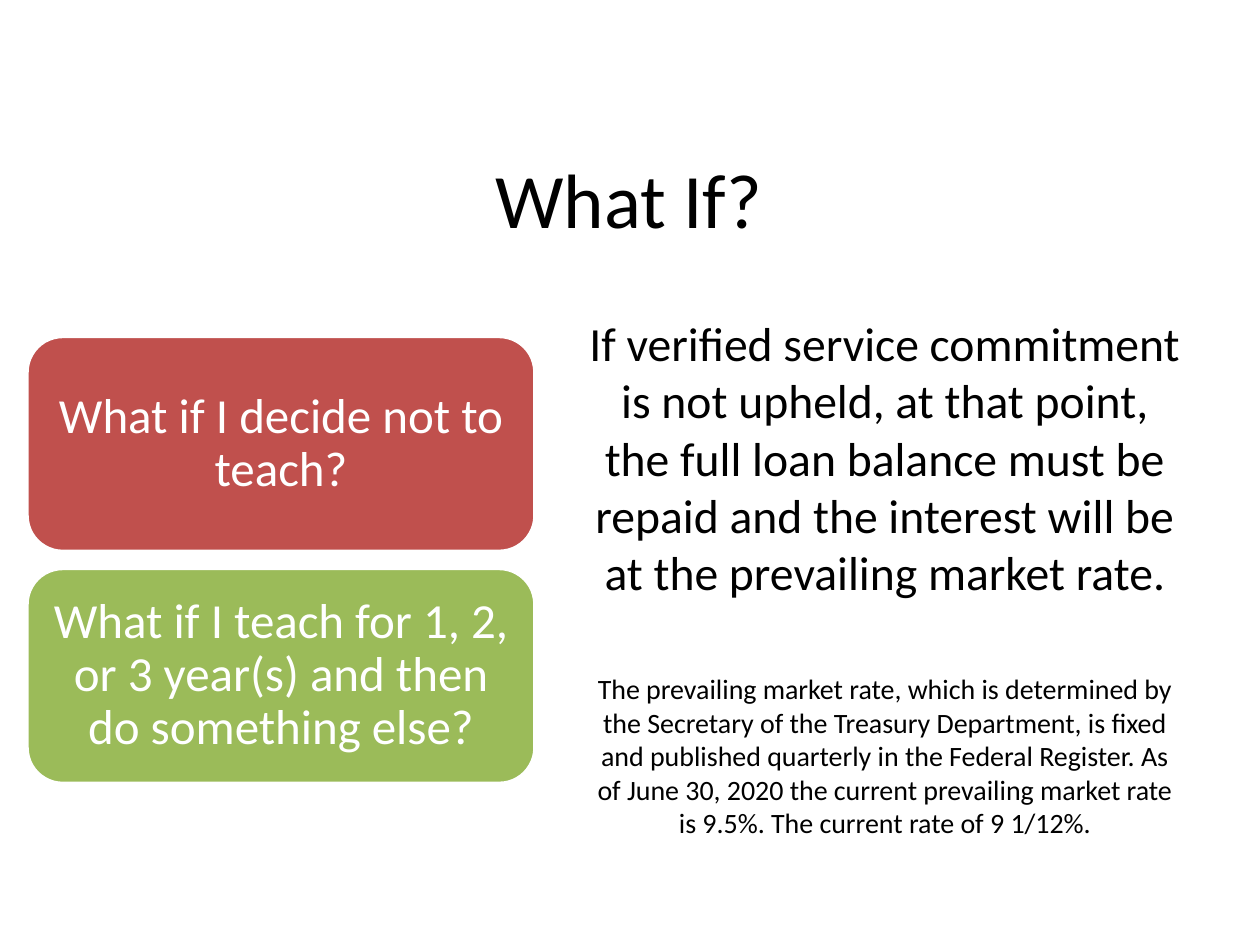
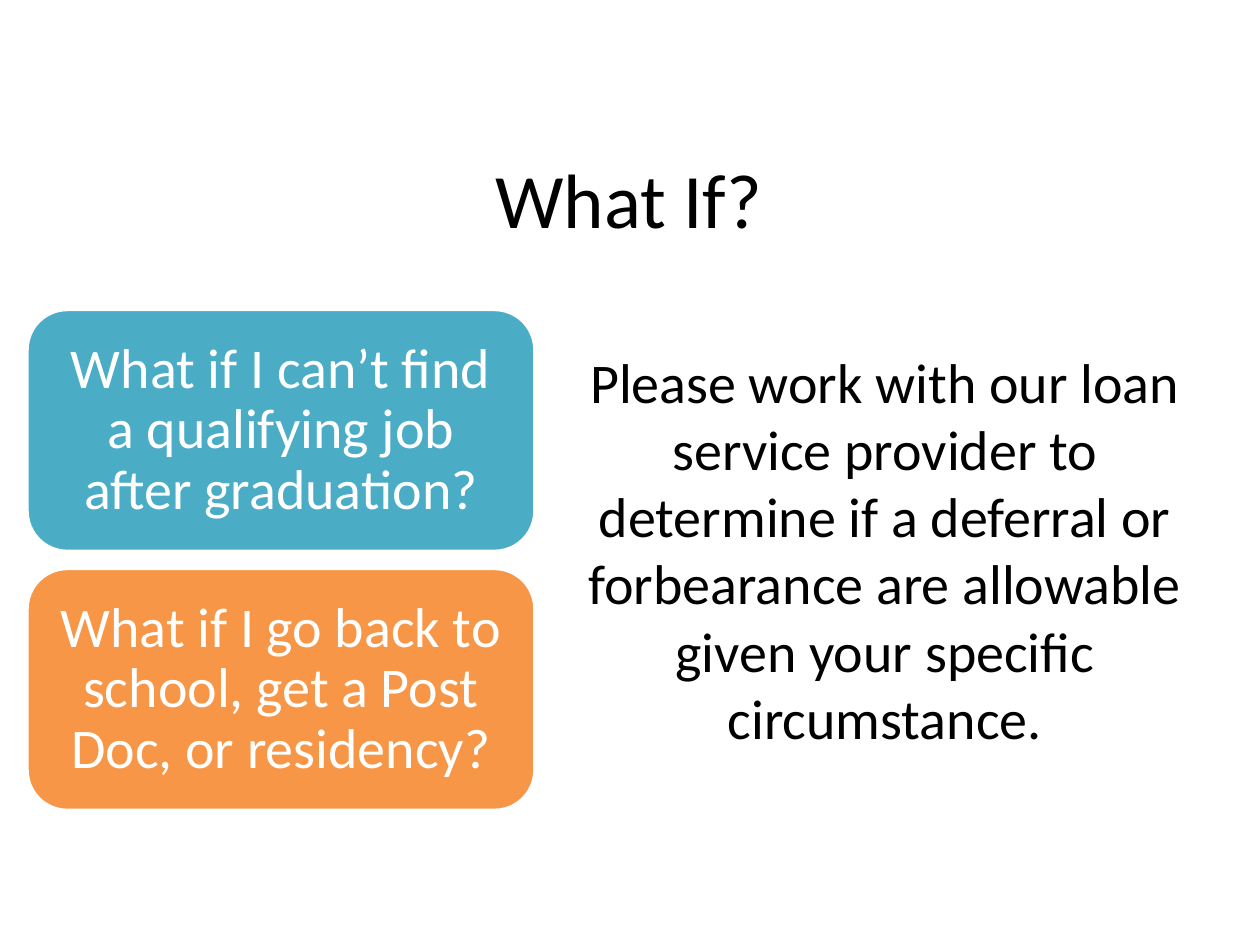
from pptx import Presentation
from pptx.dml.color import RGBColor
from pptx.enum.shapes import MSO_SHAPE as Shape
from pptx.enum.text import MSO_ANCHOR as Anchor, PP_ALIGN as Align
from pptx.util import Emu, Pt

PX_PER_INCH = 126
FONT = "Calibri"
COLORS = {
    "text": "000000",
    "white": "FFFFFF",
    "red": "C0504D",
    "green": "9BBB59",
    "teal": "4BACC6",
    "orange": "F79646",
}
TITLE_BOX = (62, 116, 1134, 164)
CARD_LEFT, CARD_WIDTH, CARD_GAP = 27, 508, 17
CARDS_MIDDLE = 560
ANSWER_LEFT, ANSWER_WIDTH = 574, 622


def px(length):
    return Emu(round(length * 914400 / PX_PER_INCH))


def rgb(name):
    return RGBColor.from_string(COLORS[name])


def write(frame, text, size, color="text", anchor=Anchor.TOP, inset=None,
          line_spacing=None, space_before=None, added=False):
    """Write one centred paragraph, after the existing ones if added."""
    frame.word_wrap = True
    frame.vertical_anchor = anchor
    if inset is not None:
        frame.margin_left = frame.margin_right = px(inset)
        frame.margin_top = frame.margin_bottom = px(inset)
    paragraph = frame.add_paragraph() if added else frame.paragraphs[0]
    paragraph.alignment = Align.CENTER
    if line_spacing is not None:
        paragraph.line_spacing = line_spacing
    if space_before is not None:
        paragraph.space_before = Pt(space_before)
    run = paragraph.add_run()
    run.text = text
    run.font.name = FONT
    run.font.size = Pt(size)
    run.font.color.rgb = rgb(color)


def add_titled_slide(deck, heading):
    slide = deck.slides.add_slide(deck.slide_layouts[5])
    title = slide.shapes.title
    title.left, title.top, title.width, title.height = map(px, TITLE_BOX)
    write(title.text_frame, heading, 44, anchor=Anchor.MIDDLE)
    return slide


def add_answer(slide, top, height, text, size):
    box = slide.shapes.add_textbox(
        px(ANSWER_LEFT), px(top), px(ANSWER_WIDTH), px(height))
    write(box.text_frame, text, size)
    return box.text_frame


def add_question_cards(slide, questions, height, size, inset):
    """Stack the (question, colour) cards around their shared middle line."""
    stack = len(questions) * (height + CARD_GAP) - CARD_GAP
    first_top = CARDS_MIDDLE - stack / 2
    for row, (question, color) in enumerate(questions):
        card = slide.shapes.add_shape(
            Shape.ROUNDED_RECTANGLE, px(CARD_LEFT),
            px(first_top + row * (height + CARD_GAP)),
            px(CARD_WIDTH), px(height))
        card.shadow.inherit = False
        card.fill.solid()
        card.fill.fore_color.rgb = rgb(color)
        card.line.color.rgb = rgb("white")
        card.line.width = Pt(2)
        write(card.text_frame, question, size, color="white",
              anchor=Anchor.MIDDLE, inset=inset, line_spacing=0.9)


def add_repayment_slide(deck):
    slide = add_titled_slide(deck, "What If?")
    answer = add_answer(
        slide, 308, 499,
        "If verified service commitment is not upheld, at that point, the full "
        "loan balance must be repaid and the interest will be at the "
        "prevailing market rate.", 27.2)
    write(answer,
          "The prevailing market rate, which is determined by the Secretary of "
          "the Treasury Department, is fixed and published quarterly in the "
          "Federal Register. As of June 30, 2020 the current prevailing market "
          "rate is 9.5%. The current rate of 9 1/12%.",
          16, space_before=41, added=True)
    add_question_cards(slide, [
        ("What if I decide not to teach?", "red"),
        ("What if I teach for 1, 2, or 3 year(s) and then do something else?",
         "green"),
    ], height=215, size=28, inset=15)


def add_deferral_slide(deck):
    slide = add_titled_slide(deck, "What If?")
    add_answer(
        slide, 341, 435,
        "Please work with our loan service provider to determine if a deferral "
        "or forbearance are allowable given your specific circumstance.", 32)
    add_question_cards(slide, [
        ("What if I can’t find a qualifying job after graduation?", "teal"),
        ("What if I go back to school, get a Post Doc, or residency?",
         "orange"),
    ], height=242, size=32, inset=16)


def main():
    deck = Presentation()
    deck.slide_width, deck.slide_height = px(1260), px(945)
    add_repayment_slide(deck)
    add_deferral_slide(deck)
    deck.save("out.pptx")


if __name__ == "__main__":
    main()
